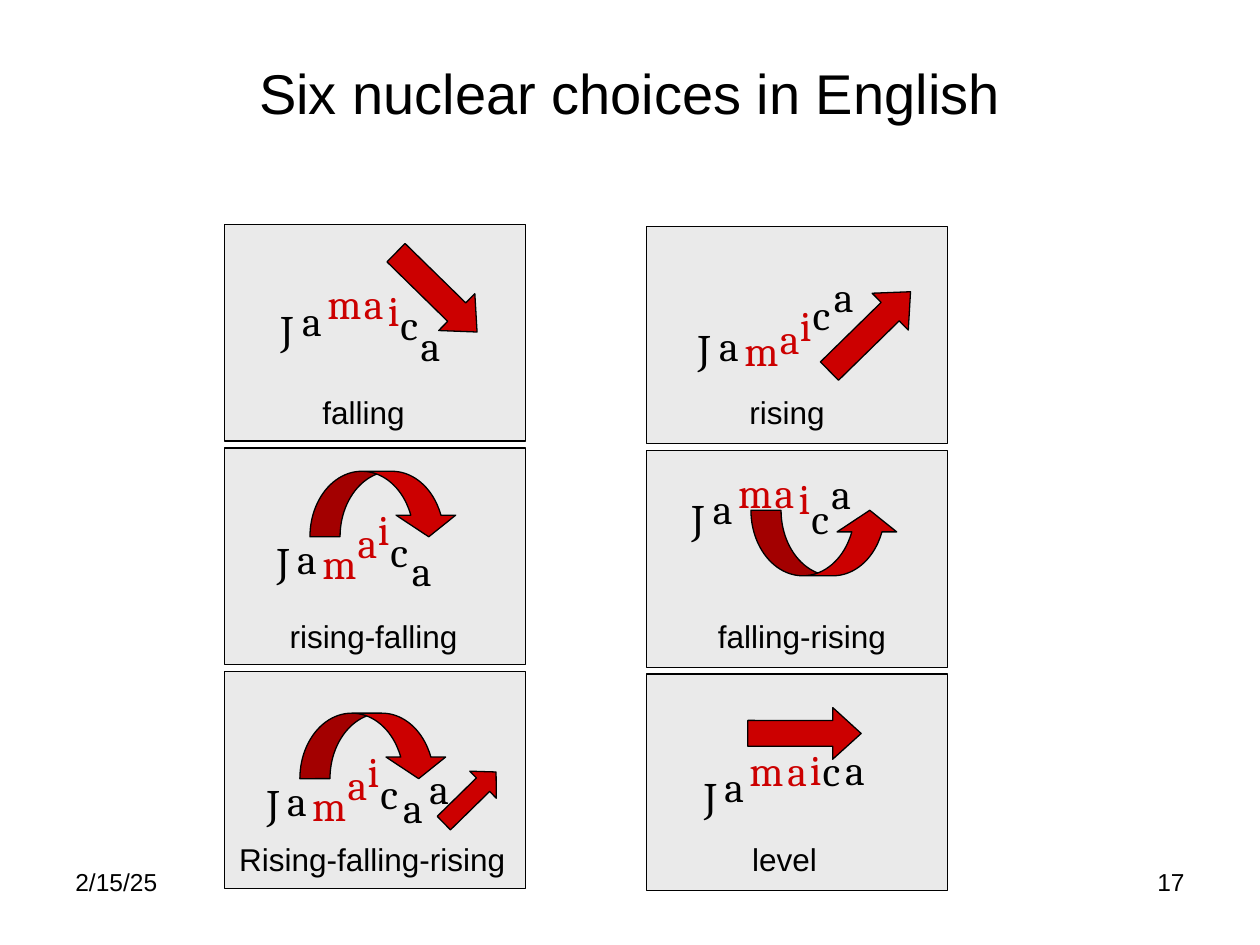
from dataclasses import dataclass

from pptx import Presentation
from pptx.dml.color import RGBColor
from pptx.enum.shapes import MSO_SHAPE as Shape
from pptx.enum.text import MSO_ANCHOR as Anchor, MSO_AUTO_SIZE as AutoSize, PP_ALIGN as Align
from pptx.util import Inches, Pt

BLACK, RED, GREY = "000000", "CC0000", "EAEAEA"
LETTER_WIDTHS = {"J": 0.33, "a": 0.35, "m": 0.46, "i": 0.29, "c": 0.35}
STRESSED = range(2, 5)
STRAIGHT = (0.5, 0.55)
CURVED = (0.46, 0.91, 0.33)


@dataclass
class Arrow:
    kind: Shape
    box: tuple[float, float, float, float]
    adjustments: tuple[float, ...]
    rotation: float = 0
    flipped: bool = False


@dataclass
class Panel:
    column: int
    row: int
    label: str
    label_left: float
    label_width: float
    word: str
    letters: list[tuple[float, float]]
    arrows: list[Arrow]


PANELS = [
    Panel(0, 0, "falling", 2.46, 0.88, "Jamaica",
          [(2.13, 2.36), (2.3, 2.29), (2.5, 2.15), (2.79, 2.15),
           (2.98, 2.21), (3.08, 2.32), (3.24, 2.49)],
          [Arrow(Shape.DOWN_ARROW, (3.26, 1.87, 0.41, 0.9), STRAIGHT, 314.4)]),
    Panel(1, 0, "rising", 5.85, 0.83, "Jamaica",
          [(5.44, 2.51), (5.61, 2.49), (5.81, 2.53), (6.09, 2.43),
           (6.25, 2.33), (6.35, 2.24), (6.52, 2.1)],
          [Arrow(Shape.DOWN_ARROW, (6.7, 2.18, 0.41, 0.9), STRAIGHT, 45.6, True)]),
    Panel(0, 1, "rising-falling", 2.2, 1.6, "Jamaica",
          [(2.1, 4.2), (2.26, 4.18), (2.46, 4.22), (2.74, 4.05),
           (2.9, 3.95), (3, 4.12), (3.17, 4.27)],
          [Arrow(Shape.CURVED_DOWN_ARROW, (2.46, 3.74, 1.18, 0.52), CURVED)]),
    Panel(1, 1, "falling-rising", 5.6, 1.6, "Jamaica",
          [(5.39, 3.86), (5.56, 3.78), (5.76, 3.65), (6.05, 3.65),
           (6.24, 3.7), (6.34, 3.86), (6.5, 3.66)],
          [Arrow(Shape.CURVED_DOWN_ARROW, (5.96, 4.05, 1.18, 0.52), CURVED, flipped=True)]),
    Panel(0, 2, "Rising-falling-rising", 1.8, 2.35, "Jamaicaa",
          [(2.02, 6.12), (2.18, 6.1), (2.38, 6.14), (2.66, 5.97),
           (2.82, 5.87), (2.92, 6.04), (3.1, 6.15), (3.31, 6)],
          [Arrow(Shape.CURVED_DOWN_ARROW, (2.38, 5.66, 1.18, 0.52), CURVED),
           Arrow(Shape.DOWN_ARROW, (3.58, 6.04, 0.3, 0.58), (0.5, 0.48), 45.6, True)]),
    Panel(1, 2, "level", 5.87, 0.75, "Jamaica",
          [(5.49, 6.07), (5.65, 5.99), (5.85, 5.86), (6.15, 5.86),
           (6.33, 5.85), (6.43, 5.86), (6.61, 5.85)],
          [Arrow(Shape.DOWN_ARROW, (6.18, 5.37, 0.41, 0.9), STRAIGHT, 270.1)]),
]


def rgb(value: str) -> RGBColor:
    return RGBColor.from_string(value)


def format_text(tf, size: float, font: str = "Arial", color: str = BLACK,
                align: Align = Align.LEFT) -> None:
    p = tf.paragraphs[0]
    p.alignment = align
    for r in p.runs:
        r.font.size, r.font.name = Pt(size), font
        r.font.color.rgb = rgb(color)


def add_text(shapes, text: str, left: float, top: float, width: float, height: float,
             size: float, font: str = "Arial", color: str = BLACK,
             align: Align = Align.LEFT, grow: bool = True) -> None:
    tf = shapes.add_textbox(*map(Inches, (left, top, width, height))).text_frame
    tf.text = text
    tf.word_wrap = not grow
    if grow:
        tf.auto_size = AutoSize.SHAPE_TO_FIT_TEXT
    format_text(tf, size, font, color, align)


def add_filled(shapes, kind: Shape, box: tuple[float, ...], fill: str):
    sp = shapes.add_shape(kind, *map(Inches, box))
    sp.shadow.inherit = False
    sp.fill.solid()
    sp.fill.fore_color.rgb = rgb(fill)
    sp.line.color.rgb = rgb(BLACK)
    sp.line.width = Pt(0.75)
    return sp


def add_arrow(shapes, arrow: Arrow) -> None:
    sp = add_filled(shapes, arrow.kind, arrow.box, RED)
    for i, value in enumerate(arrow.adjustments):
        sp.adjustments[i] = value
    sp.rotation = arrow.rotation
    if arrow.flipped:
        sp.element.spPr.xfrm.set("flipV", "1")


def add_panel(s, panel: Panel) -> None:
    shapes = s.shapes.add_group_shape().shapes
    left = 1.78 + 3.35 * panel.column
    top = 1.78 + 0.02 * panel.column + 1.775 * panel.row
    add_filled(shapes, Shape.RECTANGLE, (left, top, 2.39, 1.72), GREY)
    add_text(shapes, panel.label, panel.label_left, 3.07 + 1.775 * panel.row,
             panel.label_width, 0.4, 18)
    for i, (letter, (x, y)) in enumerate(zip(panel.word, panel.letters)):
        color = RED if i in STRESSED else BLACK
        add_text(shapes, letter, x, y, LETTER_WIDTHS[letter], 0.5, 24, "Cambria", color)
    for arrow in panel.arrows:
        add_arrow(shapes, arrow)


def main() -> None:
    prs = Presentation()
    prs.slide_width, prs.slide_height = Inches(10), Inches(7.5)
    s = prs.slides.add_slide(prs.slide_layouts[5])

    title = s.shapes.title
    title.left, title.top, title.width, title.height = map(Inches, (0.5, 0.3, 9, 0.87))
    tf = title.text_frame
    tf.text = "Six nuclear choices in English"
    tf.vertical_anchor = Anchor.MIDDLE
    format_text(tf, 32, align=Align.CENTER)

    add_text(s.shapes, "2/15/25", 0.5, 6.83, 2.33, 0.52, 14, grow=False)
    add_text(s.shapes, "17", 7.17, 6.83, 2.33, 0.52, 14, align=Align.RIGHT, grow=False)
    for panel in PANELS:
        add_panel(s, panel)
    prs.save("out.pptx")


if __name__ == "__main__":
    main()
